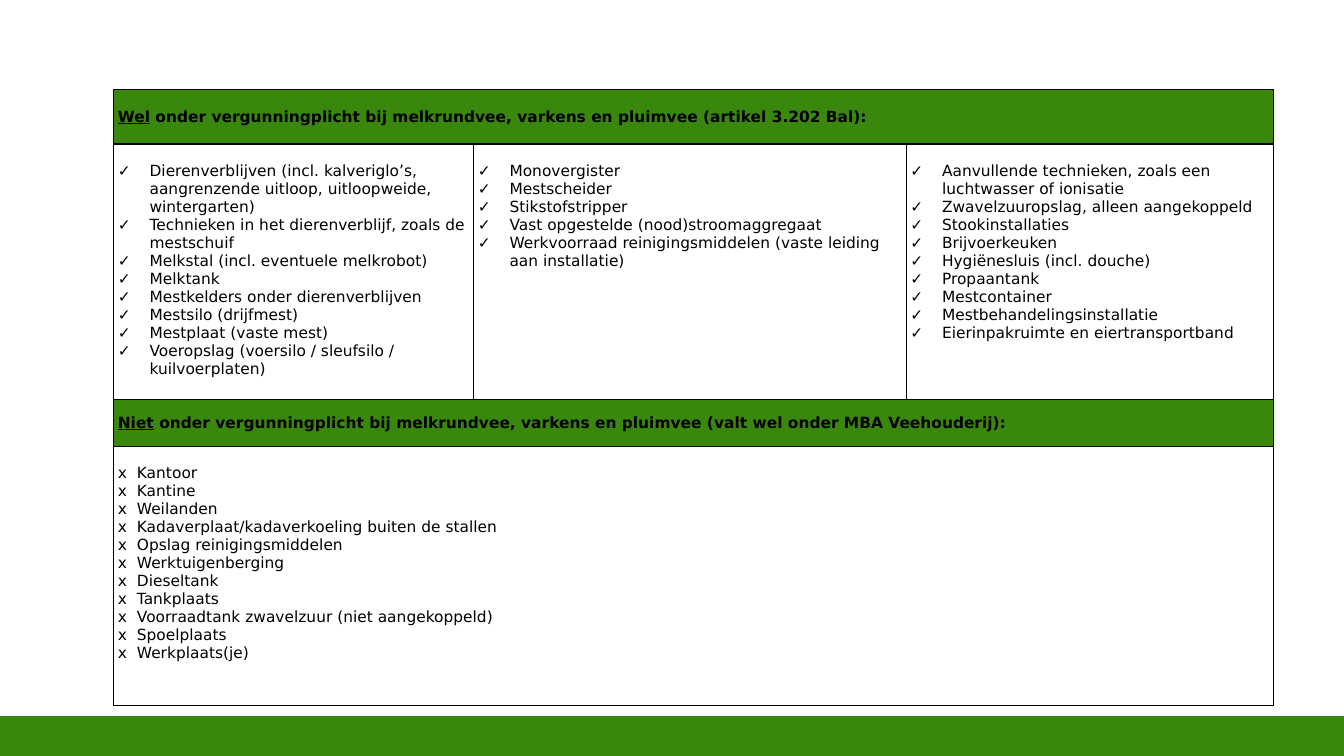
from dataclasses import dataclass

from lxml import etree
from pptx import Presentation
from pptx import util as u
from pptx.dml.color import RGBColor
from pptx.enum import shapes, text
from pptx.oxml import ns

GREEN = RGBColor(0x39, 0x87, 0x0C)
WHITE = RGBColor(0xFF, 0xFF, 0xFF)
BLACK = RGBColor(0x00, 0x00, 0x00)
BASE_FONT = {"name": "DejaVu Sans", "size": u.Pt(11)}

SLIDE_WIDTH, SLIDE_HEIGHT = u.Cm(33.87), u.Cm(19.05)
BAR_HEIGHT = u.Cm(0.98)
TABLE_LEFT, TABLE_TOP = u.Cm(2.87), u.Cm(2.26)
COLUMN_WIDTHS = [u.Cm(9.07), u.Cm(10.9), u.Cm(9.25)]
ROW_HEIGHTS = [u.Cm(1.37), u.Cm(6.43), u.Cm(1.19), u.Cm(6.53)]
SIDE_MARGIN, LIST_TOP_MARGIN = u.Cm(0.1), u.Cm(0.46)


@dataclass
class Heading:
    row: int
    keyword: str
    rest: str


@dataclass
class BulletList:
    row: int
    column: int
    bullet: str
    indent: u.Length
    items: list[str]


HEADINGS = [
    Heading(0, "Wel", " onder vergunningplicht bij melkrundvee, varkens en pluimvee "
                      "(artikel 3.202 Bal):"),
    Heading(2, "Niet", " onder vergunningplicht bij melkrundvee, varkens en pluimvee "
                       "(valt wel onder MBA Veehouderij):"),
]

LISTS = [
    BulletList(1, 0, "✓", u.Cm(0.8), [
        "Dierenverblijven (incl. kalveriglo’s, aangrenzende uitloop, uitloopweide, wintergarten)",
        "Technieken in het dierenverblijf, zoals de mestschuif",
        "Melkstal (incl. eventuele melkrobot)",
        "Melktank",
        "Mestkelders onder dierenverblijven",
        "Mestsilo (drijfmest)",
        "Mestplaat (vaste mest)",
        "Voeropslag (voersilo / sleufsilo / kuilvoerplaten)",
    ]),
    BulletList(1, 1, "✓", u.Cm(0.8), [
        "Monovergister",
        "Mestscheider",
        "Stikstofstripper",
        "Vast opgestelde (nood)stroomaggregaat",
        "Werkvoorraad reinigingsmiddelen (vaste leiding aan installatie)",
    ]),
    BulletList(1, 2, "✓", u.Cm(0.8), [
        "Aanvullende technieken, zoals een luchtwasser of ionisatie",
        "Zwavelzuuropslag, alleen aangekoppeld",
        "Stookinstallaties",
        "Brijvoerkeuken",
        "Hygiënesluis (incl. douche)",
        "Propaantank",
        "Mestcontainer",
        "Mestbehandelingsinstallatie",
        "Eierinpakruimte en eiertransportband",
    ]),
    BulletList(3, 0, "x", u.Cm(0.48), [
        "Kantoor",
        "Kantine",
        "Weilanden",
        "Kadaverplaat/kadaverkoeling buiten de stallen",
        "Opslag reinigingsmiddelen",
        "Werktuigenberging",
        "Dieseltank",
        "Tankplaats",
        "Voorraadtank zwavelzuur (niet aangekoppeld)",
        "Spoelplaats",
        "Werkplaats(je)",
    ]),
]


def add_span(para, words: str, **extra) -> None:
    span = para.add_run()
    span.text = words
    span.font.color.rgb = BLACK
    for key, value in (BASE_FONT | extra).items():
        setattr(span.font, key, value)


def add_bullet(para, bullet: str, indent: u.Length) -> None:
    properties = para._p.get_or_add_pPr()
    properties.set("marL", str(int(indent)))
    properties.set("indent", str(-int(indent)))
    etree.SubElement(properties, ns.qn("a:buFont"), typeface=BASE_FONT["name"])
    etree.SubElement(properties, ns.qn("a:buChar"), char=bullet)


def add_borders(cell) -> None:
    properties = cell._tc.get_or_add_tcPr()
    for position, side in enumerate(("a:lnL", "a:lnR", "a:lnT", "a:lnB")):
        line = etree.Element(ns.qn(side), w=str(int(u.Pt(1))))
        fill = etree.SubElement(line, ns.qn("a:solidFill"))
        etree.SubElement(fill, ns.qn("a:srgbClr"), val=str(BLACK))
        properties.insert(position, line)


def format_cell(cell, color: RGBColor, top: u.Length, anchor) -> None:
    cell.fill.solid()
    cell.fill.fore_color.rgb = color
    layout = {"margin_left": SIDE_MARGIN, "margin_right": SIDE_MARGIN,
              "margin_top": top, "margin_bottom": 0, "vertical_anchor": anchor}
    for key, value in layout.items():
        setattr(cell, key, value)
    add_borders(cell)


def fill_heading(table, heading: Heading) -> None:
    para = table.cell(heading.row, 0).text_frame.paragraphs[0]
    add_span(para, heading.keyword, bold=True, underline=True)
    add_span(para, heading.rest, bold=True)


def fill_list(table, block: BulletList) -> None:
    frame = table.cell(block.row, block.column).text_frame
    for number, item in enumerate(block.items):
        para = frame.add_paragraph() if number else frame.paragraphs[0]
        add_bullet(para, block.bullet, block.indent)
        add_span(para, item, bold=False)


def add_bottom_bar(page) -> None:
    bar = page.shapes.add_shape(shapes.MSO_SHAPE.RECTANGLE, 0, SLIDE_HEIGHT - BAR_HEIGHT,
                                SLIDE_WIDTH, BAR_HEIGHT)
    bar.shadow.inherit = False
    bar.fill.solid()
    bar.fill.fore_color.rgb = GREEN
    bar.line.color.rgb = GREEN
    bar.line.width = u.Pt(2)


def add_permit_table(page) -> None:
    table = page.shapes.add_table(len(ROW_HEIGHTS), len(COLUMN_WIDTHS), TABLE_LEFT, TABLE_TOP,
                                  sum(COLUMN_WIDTHS), sum(ROW_HEIGHTS)).table
    table.first_row = table.horz_banding = False
    for column, width in zip(table.columns, COLUMN_WIDTHS):
        column.width = width

    # Green heading rows alternate with white list rows
    for index, (row, height) in enumerate(zip(table.rows, ROW_HEIGHTS)):
        row.height = height
        for cell in row.cells:
            if index % 2:
                format_cell(cell, WHITE, LIST_TOP_MARGIN, text.MSO_ANCHOR.TOP)
            else:
                format_cell(cell, GREEN, 0, text.MSO_ANCHOR.MIDDLE)

    # Only the row with three lists stays divided
    for index in (0, 2, 3):
        table.cell(index, 0).merge(table.cell(index, len(COLUMN_WIDTHS) - 1))

    for heading in HEADINGS:
        fill_heading(table, heading)
    for block in LISTS:
        fill_list(table, block)


def main() -> None:
    deck = Presentation()
    deck.slide_width, deck.slide_height = SLIDE_WIDTH, SLIDE_HEIGHT
    page = deck.slides.add_slide(deck.slide_layouts[6])
    add_bottom_bar(page)
    add_permit_table(page)
    deck.save("out.pptx")


if __name__ == "__main__":
    main()
